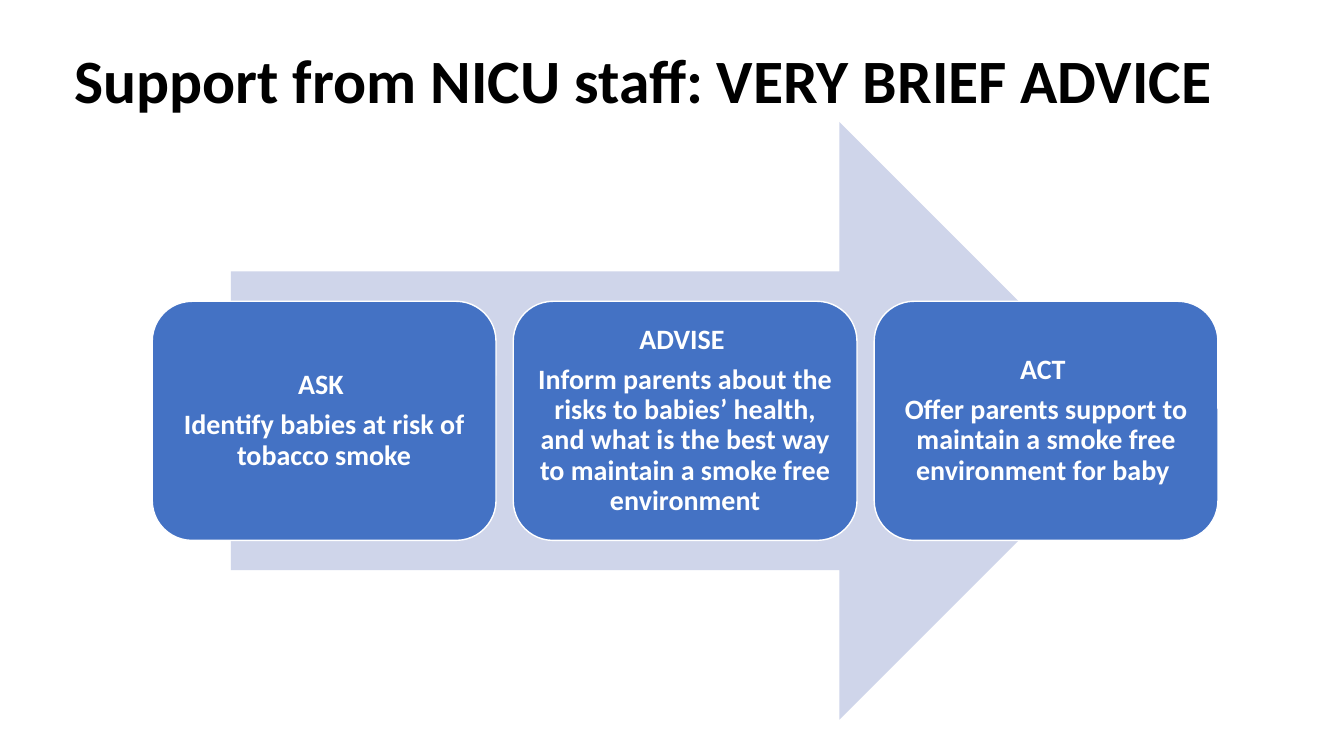
"""Build the Very Brief Advice slide: three steps in front of a broad arrow."""
from pptx import Presentation
from pptx.dml.color import RGBColor
from pptx.enum.shapes import MSO_SHAPE as Shape
from pptx.enum.text import MSO_ANCHOR as Anchor, MSO_AUTO_SIZE as AutoSize, PP_ALIGN as Align
from pptx.util import Inches, Pt

HEADING = "Support from NICU staff: VERY BRIEF ADVICE"
STEPS = [
    ("ASK ", "Identify babies at risk of tobacco smoke"),
    ("ADVISE ", "Inform parents about the risks to babies’ health, and what is "
                "the best way to maintain a smoke free environment"),
    ("ACT ", "Offer parents support to maintain a smoke free environment for baby "),
]
COLOURS = {"heading": "000000", "arrow": "CFD5EA", "step": "4472C4", "light": "FFFFFF"}
SLIDE_W, SLIDE_H = 13.33, 7.5
ARROW_LEFT, ARROW_TOP, ARROW_W, ARROW_H = 2.29, 1.21, 9, 5.93
STEP_LEFT, STEP_W, GAP = 1.51, 3.41, 0.17
STEP_H = ARROW_H * 0.4
STEP_TOP = ARROW_TOP + (ARROW_H - STEP_H) / 2


def colour(name):
    """Return the named palette colour."""
    return RGBColor.from_string(COLOURS[name])


def write(shape, lines, size, ink, align, anchor, inset=(0.1, 0.05), spacing=1.0, after=0):
    """Fill a shape with bold formatted paragraphs."""
    frame = shape.text_frame
    frame.word_wrap = True
    frame.auto_size = AutoSize.NONE
    frame.vertical_anchor = anchor
    frame.margin_left = frame.margin_right = Inches(inset[0])
    frame.margin_top = frame.margin_bottom = Inches(inset[1])
    for index, line in enumerate(lines):
        paragraph = frame.paragraphs[0] if index == 0 else frame.add_paragraph()
        paragraph.alignment = align
        paragraph.line_spacing = spacing
        paragraph.space_before = Pt(0)
        paragraph.space_after = Pt(after)
        run = paragraph.add_run()
        run.text = line
        run.font.name = "Calibri"
        run.font.size = Pt(size)
        run.font.bold = True
        run.font.color.rgb = colour(ink)


def add_block(slide, preset, left, top, width, height, fill, outline=None):
    """Add a flat preset shape, outlined when a colour is given."""
    block = slide.shapes.add_shape(preset, *map(Inches, (left, top, width, height)))
    block.shadow.inherit = False
    block.fill.solid()
    block.fill.fore_color.rgb = colour(fill)
    if outline:
        block.line.color.rgb = colour(outline)
        block.line.width = Pt(1)
    else:
        block.line.fill.background()
    return block


def main():
    """Lay out the heading, the arrow and the steps, then save."""
    deck = Presentation()
    deck.slide_width, deck.slide_height = Inches(SLIDE_W), Inches(SLIDE_H)
    slide = deck.slides.add_slide(deck.slide_layouts[5])

    heading = slide.shapes.title
    heading.left, heading.top = Inches(0.64), Inches(0.37)
    heading.width, heading.height = Inches(12.3), Inches(0.84)
    write(heading, [HEADING], 44, "heading", Align.LEFT, Anchor.TOP)

    add_block(slide, Shape.RIGHT_ARROW, ARROW_LEFT, ARROW_TOP, ARROW_W, ARROW_H, "arrow")
    for column, step_lines in enumerate(STEPS):
        left = STEP_LEFT + column * (STEP_W + GAP)
        step = add_block(slide, Shape.ROUNDED_RECTANGLE, left, STEP_TOP, STEP_W, STEP_H,
                         "step", "light")
        write(step, step_lines, 20, "light", Align.CENTER, Anchor.MIDDLE,
              inset=(0.08, 0.08), spacing=0.9, after=7)

    deck.save("out.pptx")


if __name__ == "__main__":
    main()
